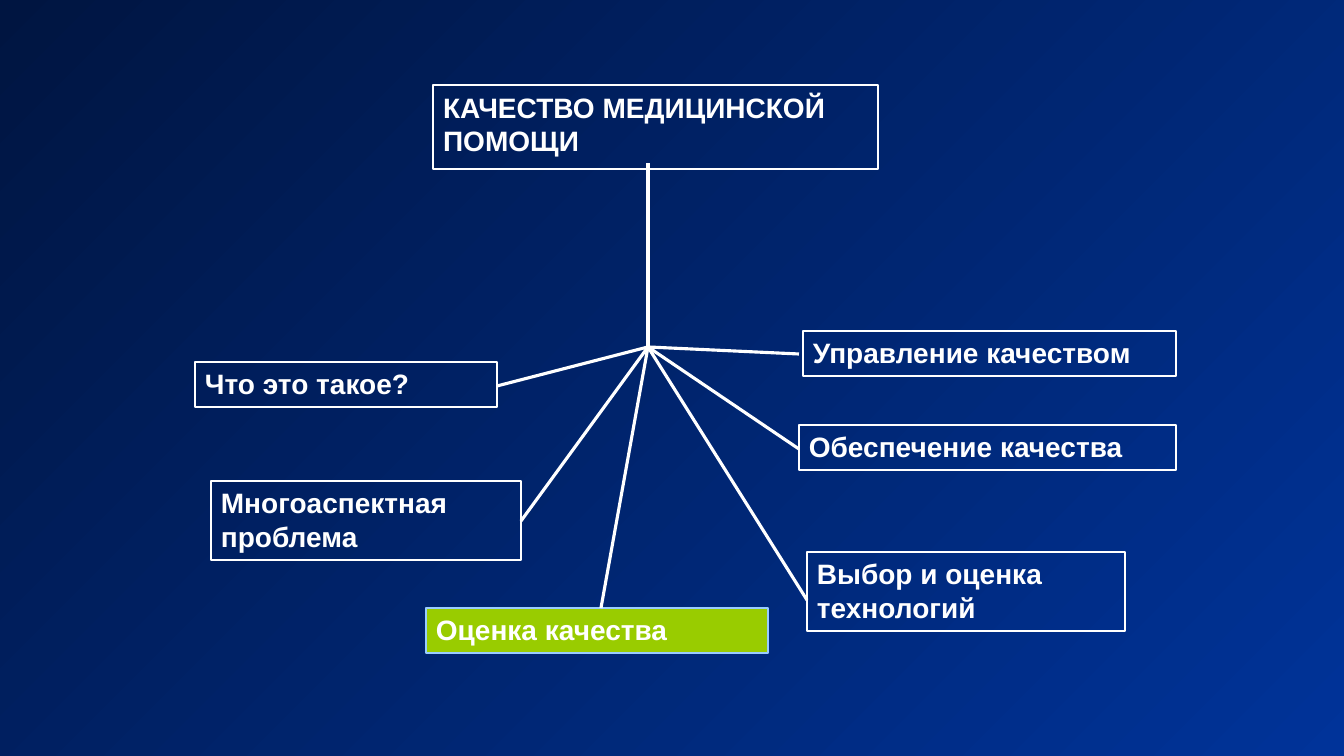
import pptx
import pptx.util
import pptx.dml.color
import pptx.enum.shapes
import pptx.enum.text
import pptx.oxml.ns
from dataclasses import dataclass
from lxml import etree

SCALE = 914400 / 100.8  # EMU in one px


@dataclass(frozen=True)
class Theme:
    dark: str = "001541"
    blue: str = "003399"
    white: str = "FFFFFF"
    green: str = "99CC00"
    sky: str = "99CCFF"
    font: str = "Arial"
    size: int = 20
    frame: float = 1
    ray: float = 2.25


def emu(px):
    return pptx.util.Emu(round(px * SCALE))


def rgb(code):
    return pptx.dml.color.RGBColor.from_string(code)


class Board:
    def __init__(self, deck, theme):
        self.theme = theme
        self.slide = deck.slides.add_slide(deck.slide_layouts[5])

    def back(self):
        fill = self.slide.background.fill
        fill.gradient()
        fill.gradient_angle = 315
        for stop, code in zip(fill.gradient_stops, (self.theme.dark, self.theme.blue)):
            stop.color.rgb = rgb(code)

    def style(self, shape, text, area, fill=None, edge=None):
        theme = self.theme
        shape.left, shape.top, shape.width, shape.height = map(emu, area)
        if fill:
            shape.fill.solid()
            shape.fill.fore_color.rgb = rgb(fill)
        shape.line.color.rgb = rgb(edge or theme.white)
        shape.line.width = pptx.util.Pt(theme.frame)
        frame = shape.text_frame
        frame.text = text
        frame.word_wrap = True
        frame.auto_size = pptx.enum.text.MSO_AUTO_SIZE.SHAPE_TO_FIT_TEXT
        frame.vertical_anchor = pptx.enum.text.MSO_ANCHOR.TOP
        para = frame.paragraphs[0]
        para.alignment = pptx.enum.text.PP_ALIGN.LEFT
        para.font.name = theme.font
        para.font.size = pptx.util.Pt(theme.size)
        para.font.bold = True
        para.font.color.rgb = rgb(theme.white)

    def title(self, text, area):
        self.style(self.slide.shapes.title, text, area)

    def box(self, text, area, fill=None, edge=None):
        shape = self.slide.shapes.add_textbox(*map(emu, area))
        self.style(shape, text, area, fill, edge)

    def ray(self, start, end):
        kind = pptx.enum.shapes.MSO_CONNECTOR.STRAIGHT
        line = self.slide.shapes.add_connector(kind, *map(emu, (*start, *end)))
        line.line.color.rgb = rgb(self.theme.white)
        line.line.width = pptx.util.Pt(self.theme.ray)
        etree.SubElement(line._element.spPr, pptx.oxml.ns.qn("a:effectLst"))


def main():
    deck = pptx.Presentation()
    deck.slide_width, deck.slide_height = emu(1344), emu(756)
    theme = Theme()
    board = Board(deck, theme)
    board.back()

    # Main topic
    board.title("КАЧЕСТВО МЕДИЦИНСКОЙ ПОМОЩИ", (433, 85, 445, 78))

    # Aspects: text, box area, end of its ray
    aspects = [
        ("Что это такое?", (195, 362, 302, 45), (497, 386)),
        ("Многоаспектная проблема", (211, 481, 310, 79), (521, 521)),
        ("Управление качеством", (803, 331, 373, 45), (799, 354)),
        ("Обеспечение качества", (799, 425, 377, 45), (799, 449)),
        ("Выбор и оценка технологий", (807, 552, 318, 79), (807, 600)),
    ]
    for text, area, _ in aspects:
        board.box(text, area)

    # Highlighted aspect
    board.box("Оценка качества", (426, 608, 342, 45), theme.green, theme.sky)

    # Rays from the hub
    hub = (648, 347)
    ends = [(648, 163), (601, 608)] + [end for _, _, end in aspects]
    for end in ends:
        board.ray(hub, end)

    deck.save("out.pptx")


if __name__ == "__main__":
    main()
